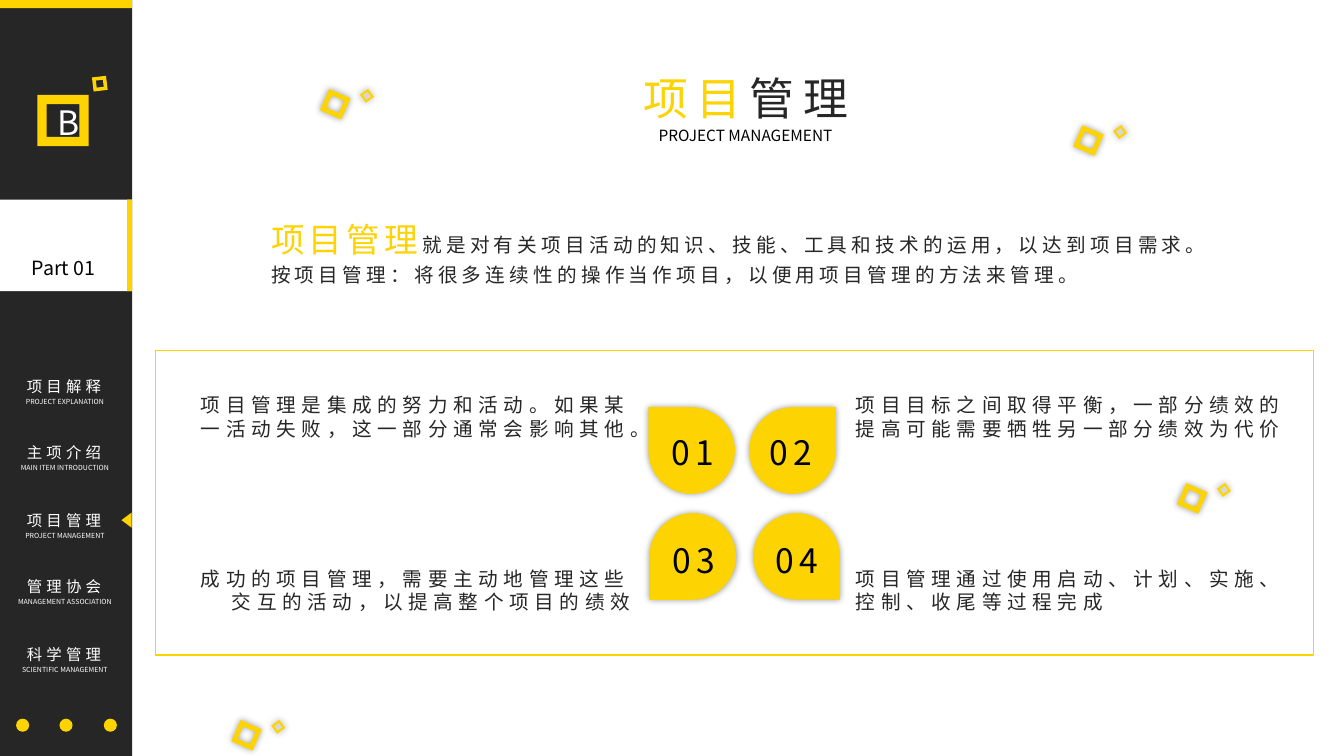
"""Build the project management slide with its side menu."""
from lxml.etree import SubElement
from pptx import Presentation
from pptx.dml.color import RGBColor
from pptx.enum.shapes import MSO_SHAPE as KIND
from pptx.enum.text import PP_ALIGN
from pptx.oxml.ns import qn
from pptx.util import Pt

PX = 9144
FONT = "Noto Sans CJK SC"
GOLD = RGBColor(0xFD, 0xD3, 0x02)
DARK = RGBColor(0x26, 0x26, 0x26)
WHITE = RGBColor(0xFF, 0xFF, 0xFF)
BLACK = RGBColor(0, 0, 0)
MID, LEFT, RIGHT = PP_ALIGN.CENTER, PP_ALIGN.LEFT, PP_ALIGN.RIGHT

deck = Presentation()
deck.slide_width, deck.slide_height = 1333 * PX, 750 * PX
slide = deck.slides.add_slide(deck.slide_layouts[6])


def write(text, box, size, color=DARK, gap=0, align=MID, wrap=False, lead=None, line=None):
    """Add a text box; lead is an optional first run of text, size and colour."""
    frame = slide.shapes.add_textbox(*[n * PX for n in box]).text_frame
    frame.word_wrap = wrap
    frame.margin_top = round(5 + size / 8) * PX
    para = frame.paragraphs[0]
    para.alignment = align
    para.line_spacing = Pt(line or size * 1.2)
    runs = [(text, size, color)]
    if lead:
        runs.insert(0, lead)
    for words, points, tint in runs:
        run = para.add_run()
        run.text = words
        run.font.size = Pt(points)
        run.font.name = FONT
        run.font.color.rgb = tint
        props = run.font._element
        props.set("spc", str(gap * 100))
        SubElement(props, qn("a:ea")).set("typeface", FONT)


def draw(kind, box, fill=GOLD, turn=0, adjust=None, glow=False):
    """Add a preset shape; without a fill it gets a gold outline."""
    shape = slide.shapes.add_shape(kind, *[n * PX for n in box])
    shape.rotation = turn
    shape.shadow.inherit = False
    if fill is None:
        shape.fill.background()
        shape.line.color.rgb = GOLD
        shape.line.width = Pt(1)
    else:
        shape.fill.solid()
        shape.fill.fore_color.rgb = fill
        shape.line.fill.background()
    if adjust:
        shape.adjustments[0] = adjust
    if glow:
        effects = shape._element.spPr.find(qn("a:effectLst"))
        shade = SubElement(effects, qn("a:outerShdw"), blurRad=str(Pt(5)), dist="0", algn="ctr", rotWithShape="0")
        tone = SubElement(shade, qn("a:srgbClr"), val="000000")
        SubElement(tone, qn("a:alpha"), val="40000")


write("管理", (619, 61, 241, 64), 32, gap=6, lead=("项目", 32, GOLD))
write("PROJECT MANAGEMENT", (637, 119, 205, 29), 11, BLACK)
write("就是对有关项目活动的知识、技能、工具和技术的运用，以达到项目需求。按项目管理：将很多连续性的操作当作项目，以便用项目管理的方法来管理。",
      (259, 222, 959, 66), 14, gap=3, align=LEFT, wrap=True, lead=("项目管理", 24, GOLD), line=20)

POINTS = [
    ("项目管理是集成的努力和活动。如果某一活动失败，这一部分通常会影响其他。", 171, 383, RIGHT),
    ("项目目标之间取得平衡，一部分绩效的提高可能需要牺牲另一部分绩效为代价", 839, 383, LEFT),
    ("成功的项目管理，需要主动地管理这些交互的活动，以提高整个项目的绩效", 171, 555, RIGHT),
    ("项目管理通过使用启动、计划、实施、控制、收尾等过程完成", 839, 555, LEFT),
]
for text, left, top, side in POINTS:
    write(text, (left, top, 464, 57), 14, gap=4, align=side, wrap=True)

DROPS = [
    ("01", 643, 404, 270, 653, 420),
    ("02", 743, 404, 0, 750, 420),
    ("03", 644, 509, 180, 654, 528),
    ("04", 747, 509, 90, 756, 528),
]
for label, left, top, turn, tag, base in DROPS:
    draw(KIND.TEAR, (left, top, 86, 86), turn=turn, glow=True)
    write(label, (tag, base, 68, 91), 24, BLACK, gap=4)

draw(KIND.RECTANGLE, (154, 348, 1149, 302), fill=None)
draw(KIND.RECTANGLE, (0, 0, 131, 750), DARK)
draw(KIND.FRAME, (37, 94, 51, 51), adjust=0.18)
write("B", (43, 93, 50, 50), 24, WHITE)
draw(KIND.FRAME, (92, 76, 14, 14), turn=353.2, adjust=0.25)
draw(KIND.RECTANGLE, (0, 198, 131, 91), WHITE)
draw(KIND.RECTANGLE, (126, 198, 5, 91))
write("Part 01", (11, 247, 104, 34), 14, BLACK)

MENU = [
    ("项目解释", "PROJECT EXPLANATION"),
    ("主项介绍", "MAIN ITEM INTRODUCTION"),
    ("项目管理", "PROJECT MANAGEMENT"),
    ("管理协会", "MANAGEMENT ASSOCIATION"),
    ("科学管理", "SCIENTIFIC MANAGEMENT"),
]
for row, (name, gloss) in enumerate(MENU):
    top = 368 + row * 133 // 2
    write(name, (-5, top, 137, 29), 11, WHITE, gap=3)
    write(gloss, (-1, top + 20, 131, 19), 5, WHITE)

draw(KIND.ISOSCELES_TRIANGLE, (118, 511, 15, 10), turn=270)
draw(KIND.RECTANGLE, (0, 0, 131, 8))
for left in (16, 59, 103):
    draw(KIND.OVAL, (left, 713, 13, 13))
for left, top in ((1171, 483), (321, 92), (1068, 128), (233, 718)):
    draw(KIND.FRAME, (left, top, 23, 23), turn=23.7, adjust=0.21, glow=True)
    draw(KIND.FRAME, (left + 38, top - 2, 10, 10), turn=324, adjust=0.21, glow=True)

deck.save("out.pptx")
